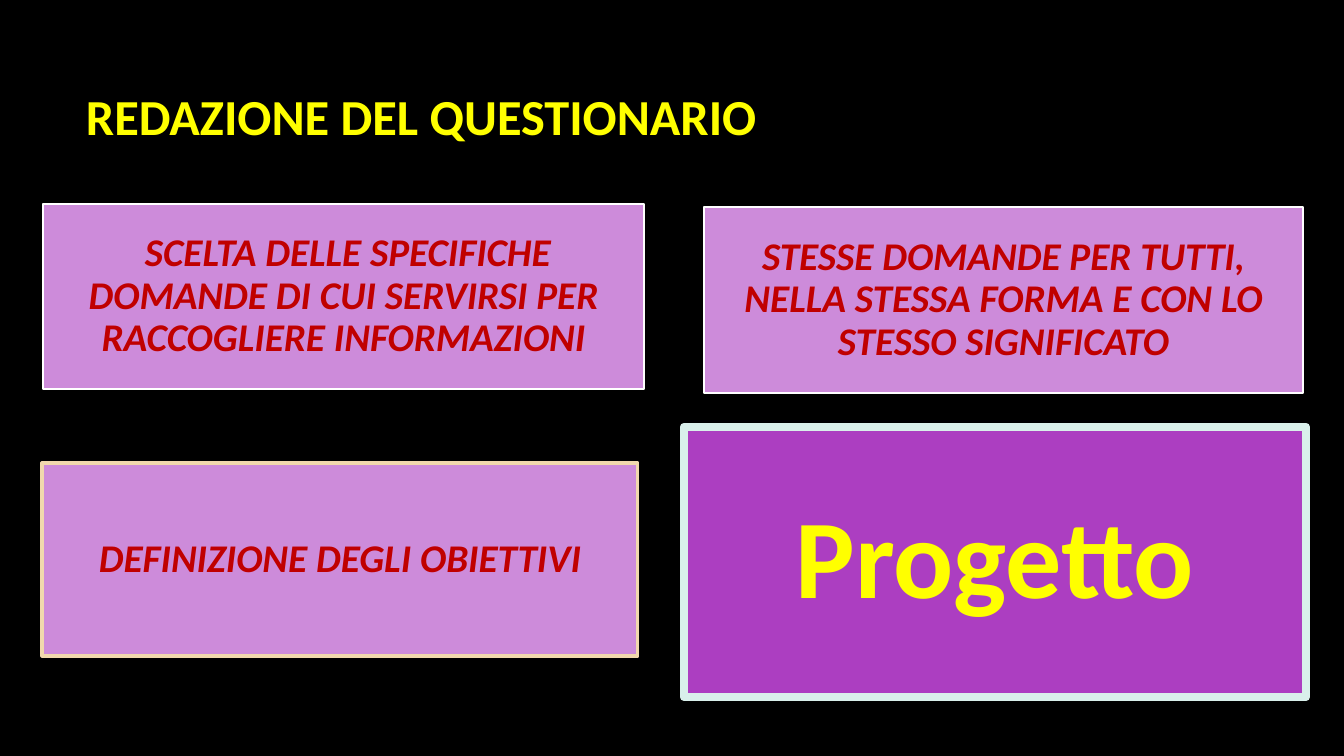
from pptx import Presentation
from pptx.dml.color import RGBColor
from pptx.enum.shapes import MSO_SHAPE
from pptx.enum.text import MSO_ANCHOR, MSO_AUTO_SIZE, PP_ALIGN
from pptx.util import Pt

SLIDE_WIDTH, SLIDE_HEIGHT = 1344, 756
EMU_PER_PX = 12192000 / SLIDE_WIDTH

BLACK = RGBColor(0x00, 0x00, 0x00)
WHITE = RGBColor(0xFF, 0xFF, 0xFF)
YELLOW = RGBColor(0xFF, 0xFF, 0x00)
RED = RGBColor(0xC0, 0x00, 0x00)
LILAC = RGBColor(0xCD, 0x8B, 0xDA)
PURPLE = RGBColor(0xAC, 0x3E, 0xC1)
SAND = RGBColor(0xF1, 0xD8, 0xAD)
MINT = RGBColor(0xD9, 0xF0, 0xEB)


def px(length):
    return round(length * EMU_PER_PX)


def write(shape, text, color, align, margins, font_format):
    """Fill a shape with one bold paragraph; margins are left, top, right, bottom in px."""
    frame = shape.text_frame
    frame.text = text
    frame_format = {
        "word_wrap": True,
        "auto_size": MSO_AUTO_SIZE.NONE,
        "vertical_anchor": MSO_ANCHOR.MIDDLE,
    }
    for side, margin in zip(("left", "top", "right", "bottom"), margins):
        frame_format[f"margin_{side}"] = px(margin)
    for name, value in frame_format.items():
        setattr(frame, name, value)
    paragraph = frame.paragraphs[0]
    paragraph.alignment = align
    paragraph.line_spacing = 0.9
    font = paragraph.runs[0].font
    for name, value in {"name": "Calibri", "bold": True, **font_format}.items():
        setattr(font, name, value)
    font.color.rgb = color


presentation = Presentation()
presentation.slide_width = px(SLIDE_WIDTH)
presentation.slide_height = px(SLIDE_HEIGHT)
slide = presentation.slides.add_slide(presentation.slide_layouts[5])
slide.background.fill.solid()
slide.background.fill.fore_color.rgb = BLACK

title = slide.shapes.title
title_place = {"left": 76, "top": 67, "width": 1117, "height": 160}
for name, value in title_place.items():
    setattr(title, name, px(value))
write(title, "REDAZIONE DEL QUESTIONARIO", YELLOW, PP_ALIGN.LEFT,
      (10, 5, 10, 60), {"size": Pt(36)})

step_font = {"size": Pt(28), "italic": True}
project_font = {"size": Pt(80)}
# text, (left, top, width, height), fill, border, border points, margin, text color, font
panels = [
    (" SCELTA DELLE SPECIFICHE DOMANDE DI CUI SERVIRSI PER RACCOGLIERE INFORMAZIONI",
     (43, 204, 601, 185), LILAC, WHITE, 1.5, 10, RED, step_font),
    ("STESSE DOMANDE PER TUTTI, NELLA STESSA FORMA E CON LO STESSO SIGNIFICATO",
     (704, 207, 599, 186), LILAC, WHITE, 1.5, 12, RED, step_font),
    ("DEFINIZIONE DEGLI OBIETTIVI",
     (42, 463, 596, 193), LILAC, SAND, 2.25, 12, RED, step_font),
    ("Progetto",
     (684, 427, 622, 270), PURPLE, MINT, 6, 33, YELLOW, project_font),
]
for text, place, fill, border, border_points, margin, color, font_format in panels:
    panel = slide.shapes.add_shape(MSO_SHAPE.RECTANGLE, *map(px, place))
    panel.shadow.inherit = False
    panel.fill.solid()
    panel.fill.fore_color.rgb = fill
    panel.line.color.rgb = border
    panel.line.width = Pt(border_points)
    write(panel, text, color, PP_ALIGN.CENTER, [margin] * 4, font_format)

presentation.save("out.pptx")
